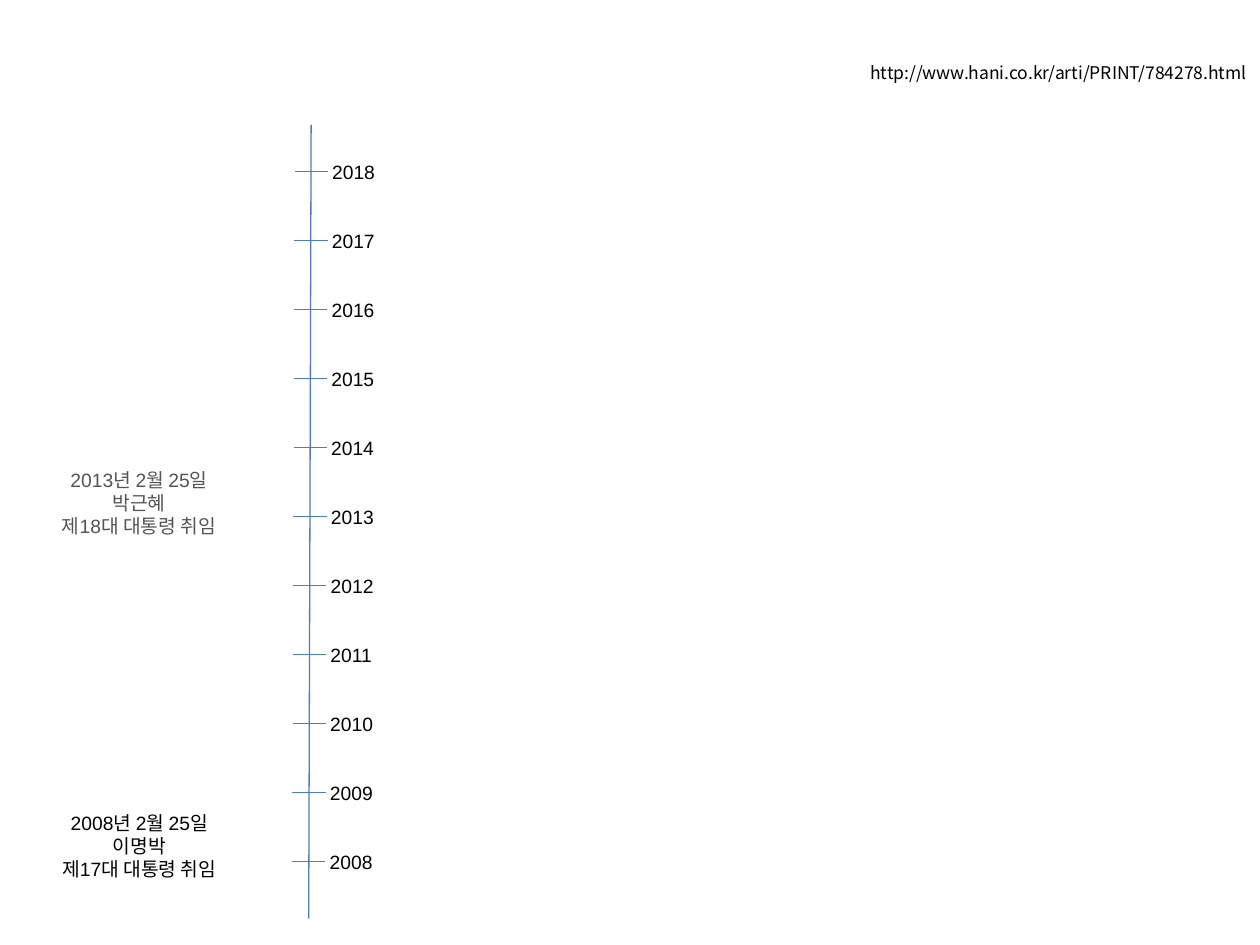
from lxml.etree import SubElement
from pptx import Presentation
from pptx.dml.color import RGBColor
from pptx.enum.shapes import MSO_CONNECTOR
from pptx.enum.text import MSO_AUTO_SIZE, PP_ALIGN
from pptx.oxml.ns import qn
from pptx.util import Pt

COLORS = {"text": "000000", "muted": "545454", "line": "4B7EBC"}
LATIN_FONT = "Arial"
KOREAN_FONT = "Noto Sans CJK KR"

YEARS = range(2018, 2007, -1)
YEAR_STEP = 39.45
FIRST_TICK_Y = 97.9
FIRST_LABEL_TOP = 87.8
TICK_LEFT, TICK_WIDTH = 168.3, 19
LABEL_LEFT = 182.7
LEAN = 0.14  # the axis leans left by this much per year


def write_text(text_frame, text, *, size=11, font=LATIN_FONT, color="text",
               align=PP_ALIGN.LEFT):
    """Write one paragraph for each line of text."""
    for index, line in enumerate(text.split("\n")):
        paragraph = text_frame.add_paragraph() if index else text_frame.paragraphs[0]
        paragraph.alignment = align
        run = paragraph.add_run()
        run.text = line
        run.font.size = Pt(size)
        run.font.color.rgb = RGBColor.from_string(COLORS[color])
        run.font.name = font
        SubElement(run._r.get_or_add_rPr(), qn("a:ea"), typeface=KOREAN_FONT)


class TimelineSlide:
    """Holds the line style and the slide being drawn."""

    def __init__(self, slide, line_color="line", line_width=0.75):
        self.slide = slide
        self.line_color = RGBColor.from_string(COLORS[line_color])
        self.line_width = Pt(line_width)

    def text_box(self, left, top, width, height, text, wrap=True, **text_format):
        shape = self.slide.shapes.add_textbox(Pt(left), Pt(top), Pt(width), Pt(height))
        shape.text_frame.word_wrap = wrap
        shape.text_frame.auto_size = MSO_AUTO_SIZE.SHAPE_TO_FIT_TEXT
        write_text(shape.text_frame, text, **text_format)

    def line(self, start_x, start_y, end_x, end_y):
        connector = self.slide.shapes.add_connector(
            MSO_CONNECTOR.STRAIGHT, Pt(start_x), Pt(start_y), Pt(end_x), Pt(end_y))
        connector.line.color.rgb = self.line_color
        connector.line.width = self.line_width
        SubElement(connector._element.spPr, qn("a:effectLst"))

    def year(self, index, year):
        """Draw the tick and the label of one year."""
        shift = LEAN * index
        tick_y = FIRST_TICK_Y + YEAR_STEP * index
        tick_left = TICK_LEFT - shift
        self.line(tick_left, tick_y, tick_left + TICK_WIDTH, tick_y)
        self.text_box(LABEL_LEFT - shift, FIRST_LABEL_TOP + YEAR_STEP * index,
                      38.9, 20.9, str(year), wrap=False)


def main():
    presentation = Presentation()
    presentation.slide_width, presentation.slide_height = Pt(720), Pt(540)
    blank_layout = presentation.slide_layouts[6]
    timeline = TimelineSlide(presentation.slides.add_slide(blank_layout))

    timeline.text_box(359.3, 31.7, 360, 19.4,
                      "http://www.hani.co.kr/arti/PRINT/784278.html",
                      size=10, font=KOREAN_FONT, align=PP_ALIGN.RIGHT)

    timeline.line(177.8, 71.3, 176.4, 524.9)
    for index, year in enumerate(YEARS):
        timeline.year(index, year)

    timeline.text_box(8.6, 264.2, 141.8, 47.5,
                      "2013년 2월 25일\n박근혜\n제18대 대통령 취임",
                      color="muted", align=PP_ALIGN.CENTER)
    timeline.text_box(5.8, 460.1, 147.6, 47.5,
                      "2008년 2월 25일\n이명박\n제17대 대통령 취임",
                      align=PP_ALIGN.CENTER)

    presentation.save("out.pptx")


if __name__ == "__main__":
    main()
